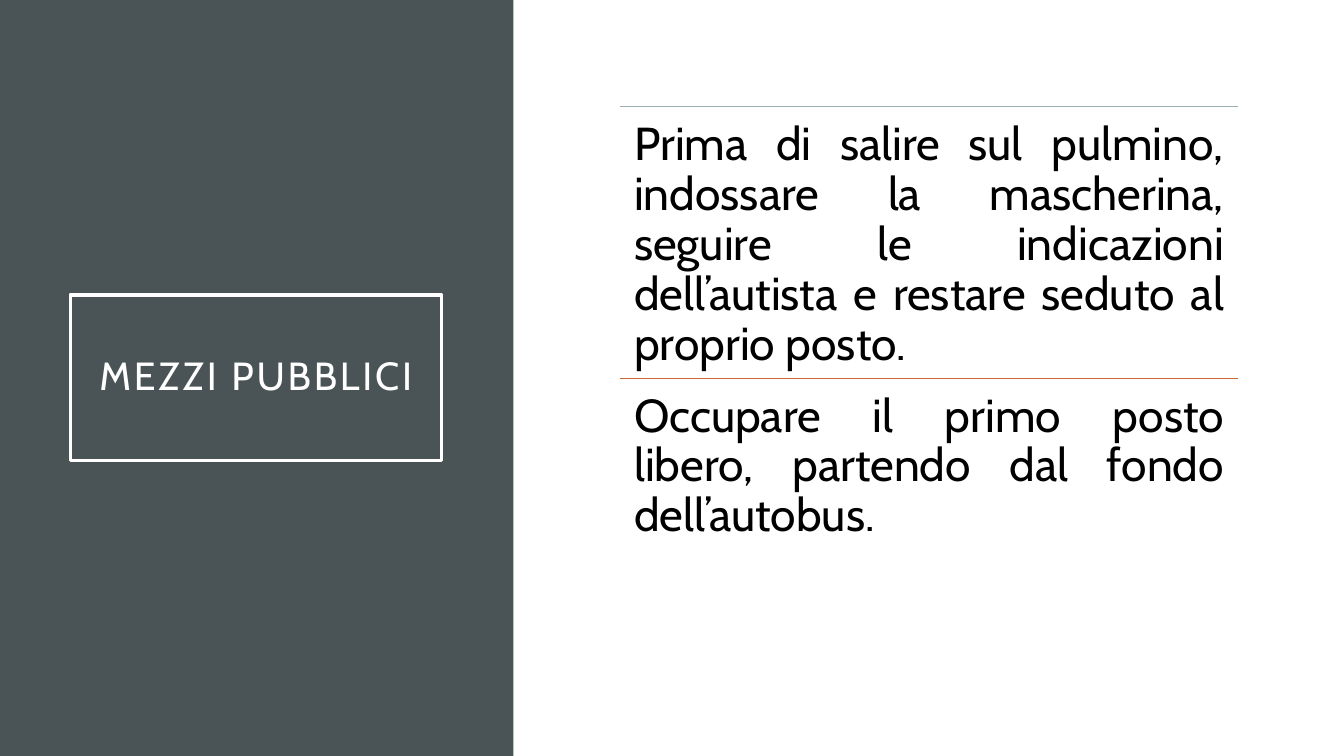
from pptx import Presentation
from pptx.dml.color import RGBColor
from pptx.enum.shapes import MSO_CONNECTOR, MSO_SHAPE
from pptx.enum.text import MSO_ANCHOR, PP_ALIGN
from pptx.oxml.ns import qn
from pptx.util import Inches, Pt
from lxml import etree

RECT, LINE = MSO_SHAPE.RECTANGLE, MSO_CONNECTOR.STRAIGHT
TOP, MIDDLE = MSO_ANCHOR.TOP, MSO_ANCHOR.MIDDLE
CENTER, JUSTIFY = PP_ALIGN.CENTER, PP_ALIGN.JUSTIFY

WIDE, HIGH = 13.33, 7.5
FONT = "Cabin"
COLORS = {"panel": "4A5356", "white": "FFFFFF", "black": "000000",
          "blue": "9BAFB5", "rust": "C96731"}
RULES = [
    ("blue", "Prima di salire sul pulmino, indossare la mascherina, seguire le "
             "indicazioni dell’autista e restare seduto al proprio posto. "),
    ("rust", "Occupare il primo posto libero, partendo dal fondo dell’autobus."),
]


def color(name):
    return RGBColor.from_string(COLORS[name])


def write(shape, text, size, ink, inset, anchor, align, after=0):
    """Fill a shape with one styled paragraph and return its run."""
    frame = shape.text_frame
    sides = ("left", "top", "right", "bottom")
    layout = {f"margin_{side}": Inches(inset) for side in sides}
    layout.update(word_wrap=True, vertical_anchor=anchor)
    para = frame.paragraphs[0]
    run = para.add_run()
    run.text = text
    formats = [
        (frame, layout),
        (para, {"alignment": align, "line_spacing": 0.9,
                "space_after": Pt(after)}),
        (run.font, {"name": FONT, "size": Pt(size)}),
    ]
    for target, values in formats:
        for key, value in values.items():
            setattr(target, key, value)
    run.font.color.rgb = color(ink)
    return run


def add_panel(slide, left, top, width, height):
    """Dark side panel with the framed title."""
    panel = slide.shapes.add_shape(
        RECT, *map(Inches, (left, top, width, height)))
    panel.shadow.inherit = False
    panel.fill.solid()
    panel.fill.fore_color.rgb = color("panel")
    panel.line.fill.background()

    # Title frame
    box = (left + 0.137 * width, top + 0.39 * height,
           0.723 * width, 0.219 * height)
    title = slide.shapes.add_shape(RECT, *map(Inches, box))
    title.shadow.inherit = False
    title.fill.background()
    title.line.color.rgb = color("white")
    title.line.width = Pt(2.5)
    run = write(title, "MEZZI PUBBLICI", 28, "white", 0.2, MIDDLE, CENTER)
    run.font._element.set("spc", "200")


def add_rules(slide, left, top, width, height):
    """Equal rows, each a thin line above a justified text."""
    row = height / len(RULES)
    for index, (tint, text) in enumerate(RULES):
        y = top + index * row
        line = slide.shapes.add_connector(
            LINE, *map(Inches, (left, y, left + width, y)))
        line.line.color.rgb = color(tint)
        line.line.width = Pt(0.5)
        etree.SubElement(line._element.spPr, qn("a:effectLst"))
        body = slide.shapes.add_textbox(*map(Inches, (left, y, width, row)))
        write(body, text, 33, "black", 0.14, TOP, JUSTIFY, after=11.5)


def main():
    deck = Presentation()
    deck.slide_width, deck.slide_height = Inches(WIDE), Inches(HIGH)
    slide = deck.slides.add_slide(deck.slide_layouts[6])
    add_panel(slide, 0, 0, 0.382 * WIDE, HIGH)
    add_rules(slide, 6.15, 1.06, 0.46 * WIDE, 5.38)
    deck.save("out.pptx")


if __name__ == "__main__":
    main()
